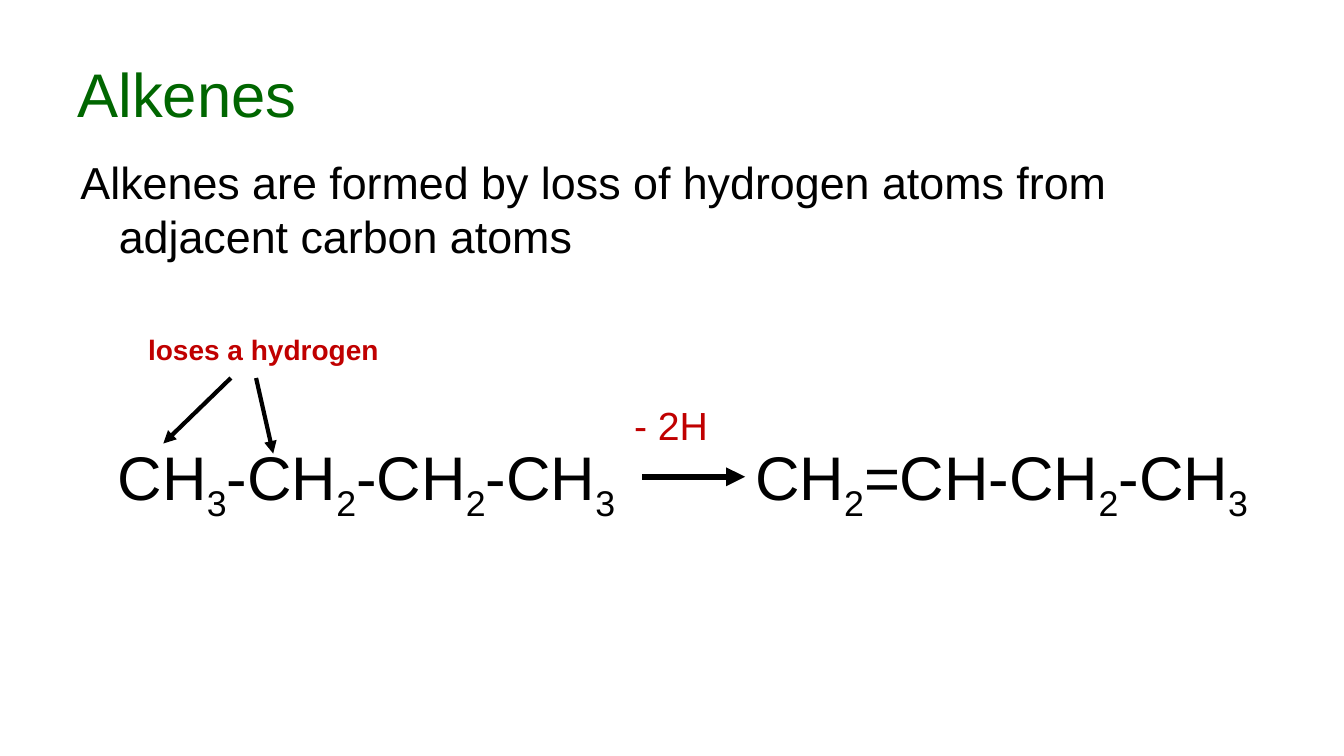
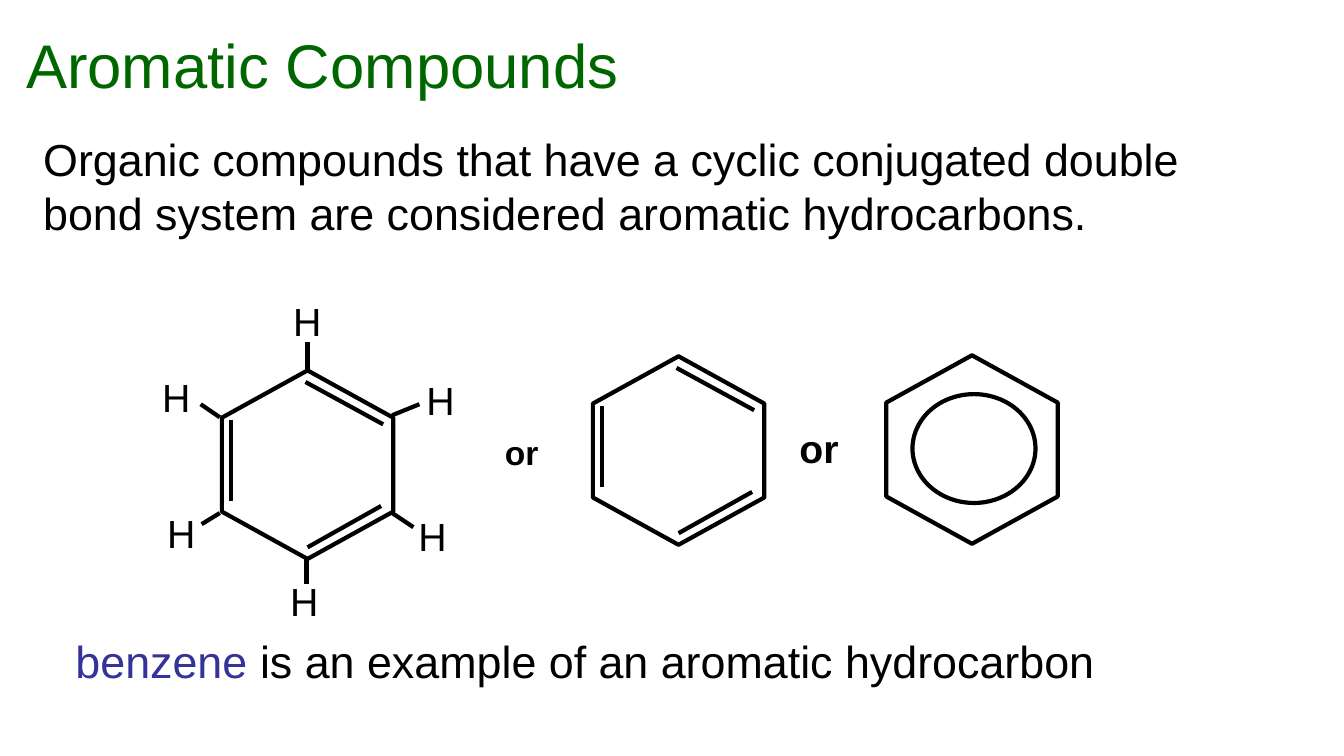
from lxml.etree import SubElement
from pptx import Presentation
from pptx.dml.color import RGBColor
from pptx.enum.shapes import MSO_CONNECTOR, MSO_SHAPE
from pptx.enum.text import MSO_ANCHOR, MSO_AUTO_SIZE
from pptx.oxml.ns import qn
from pptx.util import Pt

PX = 9144  # EMU per px, 100 px to the inch
FONT = "Arial"
COLORS = {
    "title": "006600",
    "text": "000000",
    "accent": "C00000",
    "term": "333399",
    "paper": "FFFFFF",
}
RING_W, RING_H = 187, 170  # before the quarter turn
# Inner lines of the double bonds, relative to the ring centre
DOUBLE_BONDS = [
    ((0, 82), (73, 41)),
    ((-76, -44), (-76, 36)),
    ((-2, -82), (75, -40)),
]
# Bond from ring to hydrogen, and top left of the H label
HYDROGENS = [
    ((304, 555), (304, 579), (278, 568)),
    ((305, 366), (305, 339), (281, 290)),
    ((389, 412), (416, 401), (413, 368)),
    ((218, 414), (199, 401), (151, 365)),
    ((218, 509), (200, 520), (156, 500)),
    ((389, 509), (410, 523), (405, 503)),
]


def px(*values):
    return [round(v * PX) for v in values]


def rgb(name):
    return RGBColor.from_string(COLORS[name])


def add_text(s, box, runs, size, color="text", bold=False, wrap=False):
    """Add one paragraph; runs are (text, options) pairs or a plain string."""
    tb = s.shapes.add_textbox(*px(*box))
    tf = tb.text_frame
    tf.word_wrap = wrap
    tf.auto_size = MSO_AUTO_SIZE.NONE if wrap else MSO_AUTO_SIZE.SHAPE_TO_FIT_TEXT
    p = tf.paragraphs[0]
    for text, options in [(runs, {})] if isinstance(runs, str) else runs:
        r = p.add_run()
        r.text = text
        r.font.name = FONT
        r.font.size = Pt(size)
        r.font.bold = bold
        r.font.color.rgb = rgb(options.get("color", color))
        if options.get("sub"):
            r.font._element.set("baseline", "-25000")
    return tb


def add_title(s, box, text):
    tb = add_text(s, box, text, 44, "title", wrap=True)
    tb.text_frame.vertical_anchor = MSO_ANCHOR.MIDDLE


def add_body(s, box, text, hanging=0):
    tb = add_text(s, box, text, 32, wrap=True)
    pPr = tb.text_frame.paragraphs[0]._p.get_or_add_pPr()
    pPr.set("marL", str(hanging * PX))
    pPr.set("indent", str(-hanging * PX))


def add_formula(s, box, formula):
    """Digits in the formula become subscripts."""
    runs = [(ch, {"sub": ch.isdigit()}) for ch in formula]
    return add_text(s, box, runs, 44)


def add_line(s, start, end, width=3, arrow=False):
    line = s.shapes.add_connector(MSO_CONNECTOR.STRAIGHT, *px(*start, *end))
    line.line.width = Pt(width)
    line.line.color.rgb = rgb("text")
    if arrow:
        SubElement(line.line._get_or_add_ln(), qn("a:tailEnd"), type="triangle")
    SubElement(line._element.spPr, qn("a:effectLst"))
    return line


def add_outline(s, kind, box):
    sp = s.shapes.add_shape(kind, *px(*box))
    sp.shadow.inherit = False
    sp.fill.solid()
    sp.fill.fore_color.rgb = rgb("paper")
    sp.line.color.rgb = rgb("text")
    sp.line.width = Pt(3)
    return sp


def add_ring(s, cx, cy, double_bonds=True):
    box = (cx - RING_W / 2, cy - RING_H / 2, RING_W, RING_H)
    ring = add_outline(s, MSO_SHAPE.HEXAGON, box)
    ring.adjustments[0] = 0.276
    ring.rotation = 90
    if double_bonds:
        for (x1, y1), (x2, y2) in DOUBLE_BONDS:
            add_line(s, (cx + x1, cy + y1), (cx + x2, cy + y2))


def build_alkenes(s):
    add_title(s, (67, 30, 1200, 125), "Alkenes")
    add_body(s, (70, 149, 1044, 147),
             "Alkenes are formed by loss of hydrogen atoms from adjacent carbon atoms",
             hanging=38)

    # Reaction
    alkane = add_formula(s, (107, 431, 530, 84), "CH3-CH2-CH2-CH3")
    alkene = add_formula(s, (739, 431, 522, 84), "CH2=CH-CH2-CH3")
    reaction = add_line(s, (638, 473), (739, 473), 4.5, arrow=True)
    reaction.begin_connect(alkane, 3)
    reaction.end_connect(alkene, 1)
    add_text(s, (619, 393, 95, 57), "- 2H", 28, "accent")

    # Carbons that lose hydrogen
    add_text(s, (137, 325, 251, 44), "loses a hydrogen", 20, "accent", bold=True)
    add_line(s, (229, 375), (162, 440), arrow=True)
    add_line(s, (254, 375), (271, 450), arrow=True)


def build_aromatics(s):
    add_title(s, (16, 31, 1200, 65), "Aromatic Compounds")
    add_body(s, (33, 126, 1240, 164),
             "Organic compounds that have a cyclic conjugated double bond system "
             "are considered aromatic hydrocarbons.")

    # Benzene with its hydrogens
    add_ring(s, 305, 461)
    for start, end, (left, top) in HYDROGENS:
        add_line(s, start, end)
        add_text(s, (left, top, 48, 57), "H", 28)

    # Short forms
    add_text(s, (491, 424, 53, 50), "or", 24, bold=True)
    add_ring(s, 673, 447)
    add_text(s, (783, 416, 59, 57), "or", 28, bold=True)
    add_ring(s, 964, 446, double_bonds=False)
    add_outline(s, MSO_SHAPE.OVAL, (905, 391, 122, 108))

    # Example
    add_text(s, (65, 624, 1046, 64),
             [("benzene ", {"color": "term"}),
              ("is an example of an aromatic hydrocarbon", {})], 32)


def main():
    prs = Presentation()
    prs.slide_width, prs.slide_height = px(1333, 750)
    for build in (build_alkenes, build_aromatics):
        build(prs.slides.add_slide(prs.slide_layouts[6]))
    prs.save("out.pptx")


if __name__ == "__main__":
    main()
